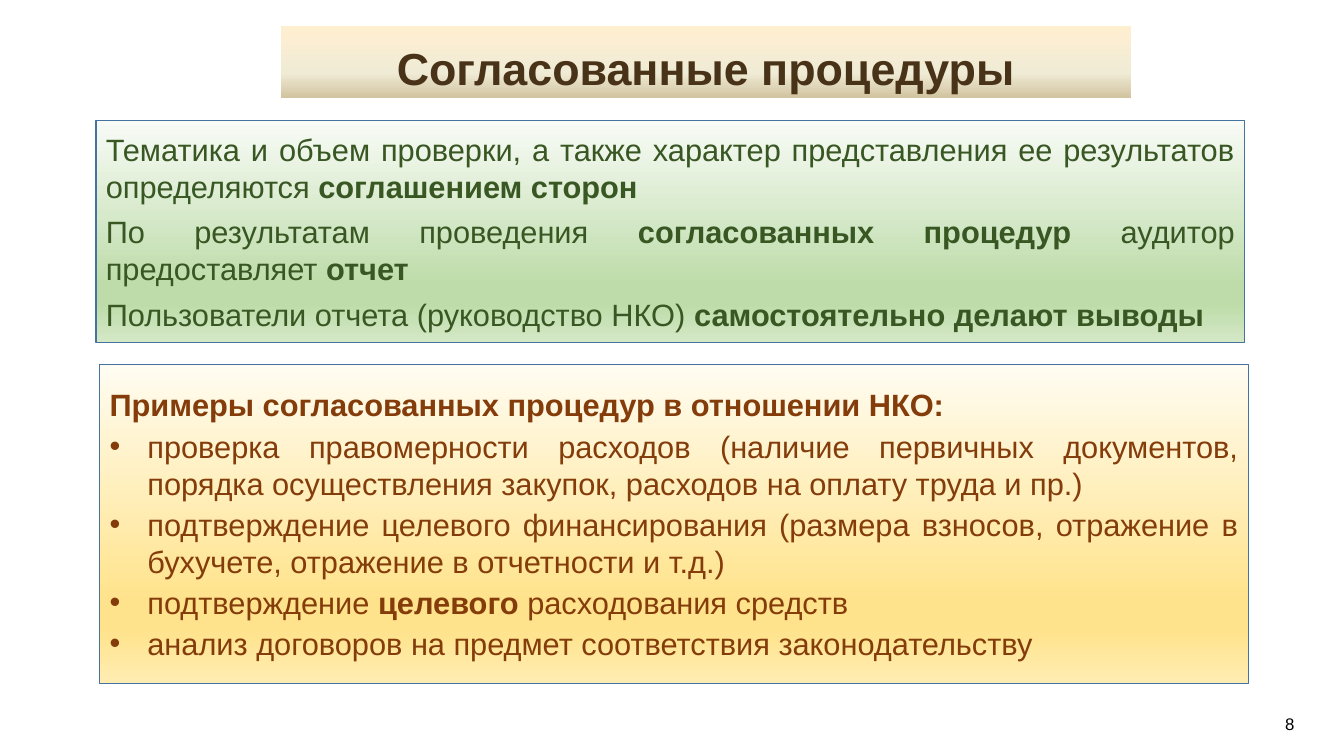
from lxml import etree
from pptx import Presentation
from pptx.dml.color import RGBColor
from pptx.enum.shapes import MSO_SHAPE as Shape
from pptx.enum.text import MSO_ANCHOR as Anchor, PP_ALIGN as Align
from pptx.oxml.ns import qn
from pptx.util import Pt


def color(value):
    return RGBColor.from_string(value)


def add_runs(p, text, font="Arial", size=22, fill="000000"):
    for i, part in enumerate(text.split("*")):
        if part:
            r = p.add_run()
            r.text = part
            r.font.name = font
            r.font.size = Pt(size)
            r.font.bold = i % 2 == 1
            r.font.color.rgb = color(fill)


class SlideBuilder:
    font = "Arial"
    border = "43739E"

    def __init__(self, prs):
        self.s = prs.slides.add_slide(prs.slide_layouts[6])

    def panel(self, x, y, w, h, stops, line=None):
        sp = self.s.shapes.add_shape(Shape.RECTANGLE, Pt(x), Pt(y), Pt(w), Pt(h))
        sp.shadow.inherit = False
        sp.fill.gradient()
        sp.fill.gradient_angle = 270
        gs_list = sp._element.spPr.find(".//" + qn("a:gsLst"))
        for gs in list(gs_list):
            gs_list.remove(gs)
        for pos, value in stops:
            gs = etree.SubElement(gs_list, qn("a:gs"), pos=str(pos * 1000))
            etree.SubElement(gs, qn("a:srgbClr"), val=value)
        if line:
            sp.line.color.rgb = color(line)
            sp.line.width = Pt(1)
        else:
            sp.line.fill.background()
        tf = sp.text_frame
        tf.word_wrap = True
        tf.vertical_anchor = Anchor.MIDDLE
        return tf

    def label(self, x, y, w, h, text, **fmt):
        tf = self.s.shapes.add_textbox(Pt(x), Pt(y), Pt(w), Pt(h)).text_frame
        tf.word_wrap = True
        self.paragraphs(tf, [text], **fmt)

    def paragraphs(self, tf, texts, align=Align.LEFT, before=0, after=0, spacing=None, **fmt):
        for i, text in enumerate(texts):
            p = tf.add_paragraph() if i else tf.paragraphs[0]
            p.alignment = align
            p.space_before = Pt(before)
            p.space_after = Pt(after)
            if spacing:
                p.line_spacing = spacing
            if text.startswith("•"):
                self.bullet(p)
            add_runs(p, text.lstrip("•"), font=self.font, **fmt)

    def bullet(self, p, indent=27):
        pPr = p._p.get_or_add_pPr()
        pPr.set("marL", str(Pt(indent)))
        pPr.set("indent", str(-Pt(indent)))
        etree.SubElement(pPr, qn("a:buFont"), typeface=self.font)
        etree.SubElement(pPr, qn("a:buChar"), char="•")


TITLE_STOPS = [(0, "FFEFD1"), (65, "F0EBD5"), (100, "D1C39F")]
GREEN_STOPS = [(0, "F8FBF6"), (74, "BEDCAA"), (83, "BEDCAA"), (100, "D4E8C6")]
GOLD_STOPS = [(0, "FFFCF2"), (74, "FFE38C"), (83, "FFE38C"), (100, "FFECB2")]

TERMS = [
    "Тематика и объем проверки, а также характер представления ее результатов "
    "определяются *соглашением сторон*",
    "По результатам проведения *согласованных процедур *аудитор предоставляет *отчет*",
    "Пользователи отчета (руководство НКО) *самостоятельно делают выводы*",
]
EXAMPLES = [
    "*Примеры согласованных процедур в отношении НКО:*",
    "•проверка правомерности расходов (наличие первичных документов, "
    "порядка осуществления закупок, расходов на оплату труда и пр.)",
    "•подтверждение целевого финансирования (размера взносов, "
    "отражение в бухучете, отражение в отчетности и т.д.)",
    "•подтверждение *целевого* расходования средств",
    "•анализ договоров на предмет соответствия законодательству",
]


def main():
    prs = Presentation()
    prs.slide_width, prs.slide_height = Pt(960), Pt(540)
    b = SlideBuilder(prs)

    title = b.panel(200.8, 18.6, 607, 51.6, TITLE_STOPS)
    b.paragraphs(title, ["*Согласованные процедуры*"], align=Align.CENTER,
                 spacing=1.2, size=32, fill="483218")

    terms = b.panel(68.5, 86.2, 820.6, 158.4, GREEN_STOPS, line=b.border)
    b.paragraphs(terms, TERMS, align=Align.JUSTIFY, before=6, fill="385723")

    examples = b.panel(71.2, 260.2, 820.6, 228, GOLD_STOPS, line=b.border)
    b.paragraphs(examples, EXAMPLES, align=Align.JUSTIFY, after=3, fill="843C0B")

    b.label(910.8, 506.2, 29.5, 21.6, "8", size=12)
    prs.save("out.pptx")


if __name__ == "__main__":
    main()
